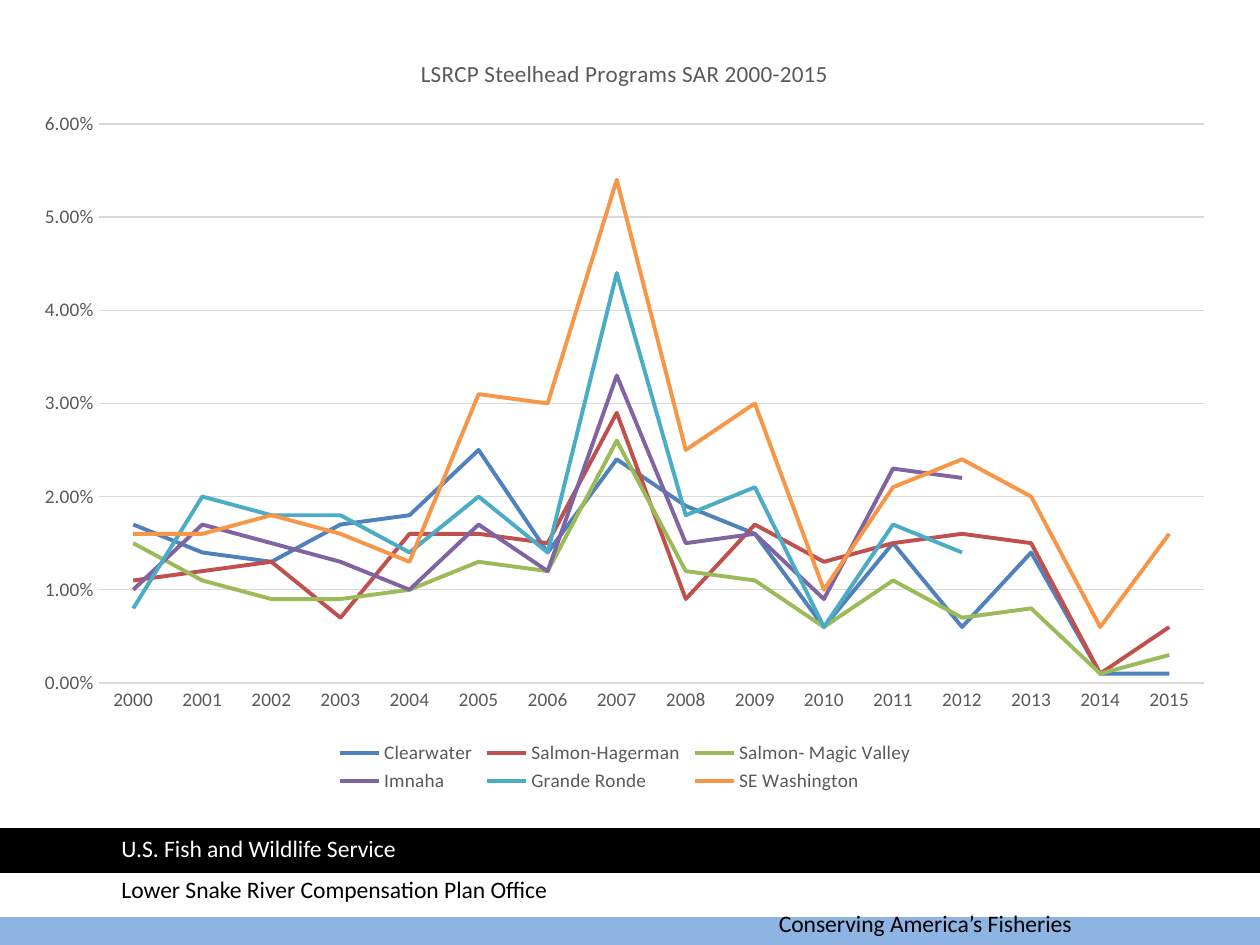
"""Build the steelhead smolt-to-adult return slide: a line chart above three footer bands."""
import lxml.etree
import pptx
import pptx.chart.data
import pptx.dml.color
import pptx.enum.chart
import pptx.enum.shapes
import pptx.oxml
import pptx.oxml.ns
import pptx.util

Cm = pptx.util.Cm
Pt = pptx.util.Pt


def rgb(value):
    """Turn a hex string into a colour."""
    return pptx.dml.color.RGBColor.from_string(value)


def apply_format(target, values):
    """Set each attribute named in the dict of format values."""
    for name, value in values.items():
        setattr(target, name, value)


presentation = pptx.Presentation()
apply_format(presentation, {"slide_width": Cm(25.4), "slide_height": Cm(19.05)})
slide = presentation.slides.add_slide(presentation.slide_layouts[6])

bands = [(-0.03, 18.22, "8EB4E3"), (0, 17.61, "FFFFFF"), (0, 16.72, "000000")]
for left, top, colour in bands:
    band = slide.shapes.add_shape(
        pptx.enum.shapes.MSO_SHAPE.RECTANGLE, Cm(left), Cm(top), Cm(25.4), Cm(0.84))
    band.shadow.inherit = False
    band.fill.solid()
    band.fill.fore_color.rgb = band.line.color.rgb = rgb(colour)
    band.line.width = Pt(2)

captions = [
    ("Conserving America’s Fisheries", 15.45, 18.2, 9.32, "000000"),
    ("U.S. Fish and Wildlife Service", 2.2, 16.69, 10.57, "FFFFFF"),
    ("Lower Snake River Compensation Plan Office", 2.2, 17.52, 12.62, "000000"),
]
for wording, left, top, width, colour in captions:
    caption = slide.shapes.add_textbox(Cm(left), Cm(top), Cm(width), Cm(0.84)).text_frame
    caption.word_wrap = True
    caption.text = wording
    run_font = caption.paragraphs[0].runs[0].font
    apply_format(run_font, {"name": "Calibri", "size": Pt(13.5)})
    run_font.color.rgb = rgb(colour)

programs = [
    ("Clearwater", "4F81BD",
     [0.017, 0.014, 0.013, 0.017, 0.018, 0.025, 0.014, 0.024,
      0.019, 0.016, 0.006, 0.015, 0.006, 0.014, 0.001, 0.001]),
    ("Salmon-Hagerman", "C0504D",
     [0.011, 0.012, 0.013, 0.007, 0.016, 0.016, 0.015, 0.029,
      0.009, 0.017, 0.013, 0.015, 0.016, 0.015, 0.001, 0.006]),
    ("Salmon- Magic Valley", "9BBB59",
     [0.015, 0.011, 0.009, 0.009, 0.01, 0.013, 0.012, 0.026,
      0.012, 0.011, 0.006, 0.011, 0.007, 0.008, 0.001, 0.003]),
    ("Imnaha", "8064A2",
     [0.01, 0.017, 0.015, 0.013, 0.01, 0.017, 0.012, 0.033,
      0.015, 0.016, 0.009, 0.023, 0.022, None, None, None]),
    ("Grande Ronde", "4BACC6",
     [0.008, 0.02, 0.018, 0.018, 0.014, 0.02, 0.014, 0.044,
      0.018, 0.021, 0.006, 0.017, 0.014, None, None, None]),
    ("SE Washington", "F79646",
     [0.016, 0.016, 0.018, 0.016, 0.013, 0.031, 0.03, 0.054,
      0.025, 0.03, 0.01, 0.021, 0.024, 0.02, 0.006, 0.016]),
]
returns = pptx.chart.data.CategoryChartData(number_format="0.00%")
returns.categories = [str(year) for year in range(2000, 2016)]
for program, colour, rates_by_year in programs:
    returns.add_series(program, rates_by_year)

chart_width, chart_height = 24.33, 15.44
chart = slide.shapes.add_chart(
    pptx.enum.chart.XL_CHART_TYPE.LINE,
    Cm(0.43), Cm(0.64), Cm(chart_width), Cm(chart_height), returns).chart
label_format = {"name": "Calibri", "size": Pt(11)}
apply_format(chart.font, label_format)
chart.font.color.rgb = rgb("000000")
chart.plots[0].vary_by_categories = False

for line, (program, colour, rates_by_year) in zip(chart.plots[0].series, programs):
    line.smooth = False
    line.marker.style = pptx.enum.chart.XL_MARKER_STYLE.NONE
    line.format.line.width = Pt(2.25)
    line.format.line.color.rgb = rgb(colour)

chart.has_title = True
chart.chart_title.include_in_layout = False
chart.chart_title.text_frame.text = "LSRCP Steelhead Programs SAR 2000-2015"
title_font = chart.chart_title.text_frame.paragraphs[0].runs[0].font
apply_format(title_font, {"name": "Calibri", "size": Pt(13.2), "bold": False})
title_font.color.rgb = rgb("595959")

chart.has_legend = True
apply_format(chart.legend, {
    "position": pptx.enum.chart.XL_LEGEND_POSITION.BOTTOM, "include_in_layout": False})

years, rates = chart.category_axis, chart.value_axis
for axis in (years, rates):
    axis.major_tick_mark = axis.minor_tick_mark = pptx.enum.chart.XL_TICK_MARK.NONE
for labelled in (years.tick_labels, rates.tick_labels, chart.legend):
    apply_format(labelled.font, label_format)
    labelled.font.color.rgb = rgb("595959")
apply_format(rates, {"minimum_scale": 0, "maximum_scale": 0.06, "major_unit": 0.01})
apply_format(rates.tick_labels, {"number_format": "0.00%", "number_format_is_linked": False})
rates.format.line.fill.background()
for rule in (years.format.line, rates.major_gridlines.format.line):
    rule.width = Pt(0.75)
    rule.color.rgb = rgb("D9D9D9")

placements = [
    ("c:title", "c:tx", {"x": 7.97, "y": 0.44}),
    ("c:plotArea", None, {"x": 1.56, "y": 1.86, "w": 22.28, "h": 11.27}),
    ("c:legend", "c:legendPos", {"x": 6.25, "y": 14.2, "w": 11.84, "h": 1.24}),
]
extents = {"x": chart_width, "y": chart_height, "w": chart_width, "h": chart_height}
qn = pptx.oxml.ns.qn
for part, predecessor, lengths in placements:
    holder = chart.element.find(".//" + qn(part))
    for automatic in holder.findall(qn("c:layout")):
        holder.remove(automatic)
    layout = lxml.etree.Element(qn("c:layout"))
    manual = lxml.etree.SubElement(layout, qn("c:manualLayout"))
    if part == "c:plotArea":
        lxml.etree.SubElement(manual, qn("c:layoutTarget"), val="inner")
    for edge in ("x", "y"):
        lxml.etree.SubElement(manual, qn(f"c:{edge}Mode"), val="edge")
    for side, length in lengths.items():
        lxml.etree.SubElement(manual, qn(f"c:{side}"), val=str(length / extents[side]))
    if predecessor:
        holder.find(qn(predecessor)).addnext(layout)
    else:
        holder.insert(0, layout)

presentation.save("out.pptx")
